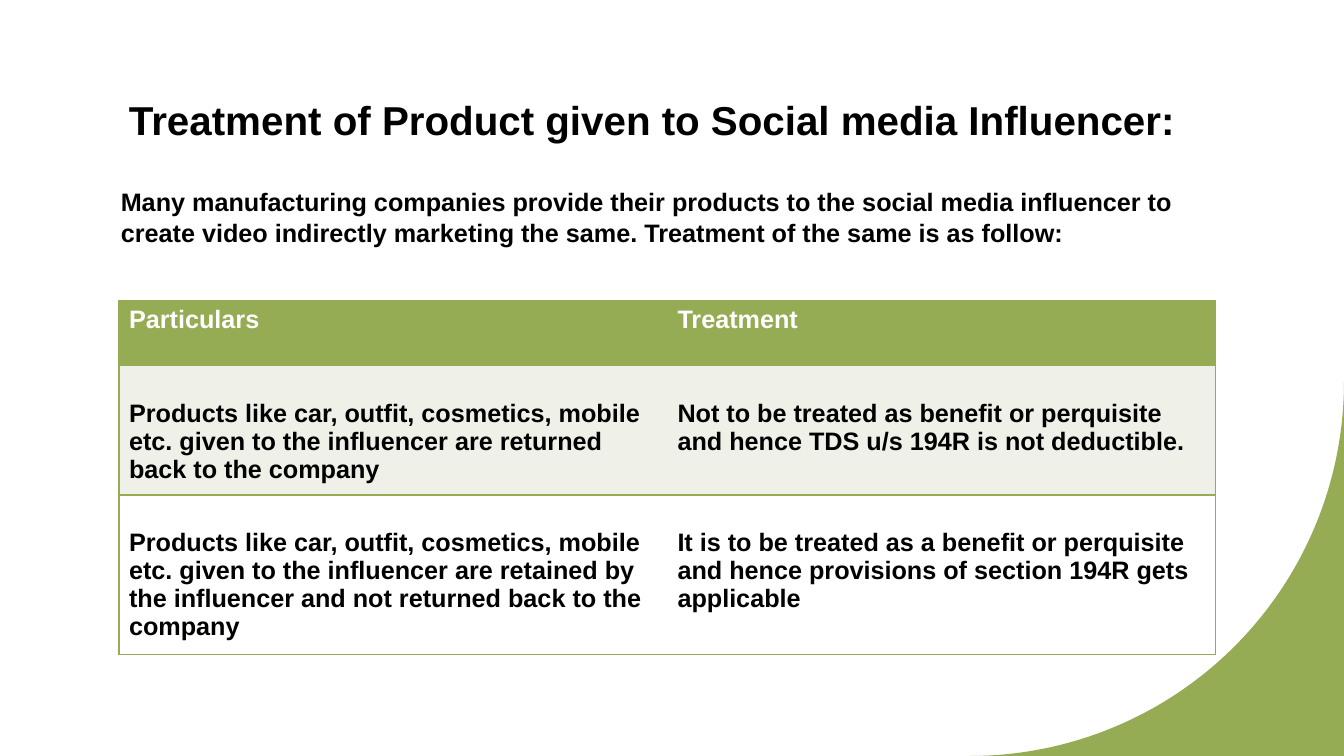
from math import cos, pi, sin

from lxml.etree import SubElement
from pptx import Presentation
from pptx.dml.color import RGBColor
from pptx.enum.text import MSO_ANCHOR as Anchor
from pptx.oxml.ns import qn
from pptx.util import Inches, Pt

TITLE = "Treatment of Product given to Social media Influencer:"
INTRO = ("Many manufacturing companies provide their products to the social media "
         "influencer to create video indirectly marketing the same. "
         "Treatment of the same is as follow:")
ROWS = [
    ("Particulars", "Treatment"),
    ("Products like car, outfit, cosmetics, mobile etc. given to the influencer "
     "are returned back to the company",
     "Not to be treated as benefit or perquisite and hence TDS u/s 194R is not deductible."),
    ("Products like car, outfit, cosmetics, mobile etc. given to the influencer "
     "are retained by the influencer and not returned back to the company",
     "It is to be treated as a benefit or perquisite and hence provisions of "
     "section 194R gets applicable"),
]
GREEN, BLACK, WHITE, PALE = "95AB54", "000000", "FFFFFF", "EFF1E9"
ROW_STYLES = [(GREEN, WHITE, 0.05), (PALE, BLACK, 0.33), (WHITE, BLACK, 0.33)]
ROW_HEIGHTS = (0.65, 1.22, 1.51)
WIDTH, HEIGHT = 13.33, 7.5
LEFT, TABLE_TOP, TABLE_WIDTH = 1.18, 2.98, 10.88
RADIUS, ARC_STEPS = 3.71, 90


def color(hex_string):
    return RGBColor.from_string(hex_string)


def write(tf, text, size=18, font_color=BLACK, spacing=1.0):
    tf.word_wrap = True
    p = tf.paragraphs[0]
    p.line_spacing = spacing
    r = p.add_run()
    r.text = text
    r.font.name, r.font.size, r.font.bold = "Arial", Pt(size), True
    r.font.color.rgb = color(font_color)


def add_text(slide, box, text, anchor=Anchor.TOP, **style):
    tf = slide.shapes.add_textbox(*map(Inches, box)).text_frame
    tf.vertical_anchor = anchor
    write(tf, text, **style)


def set_borders(cell, visible):
    """Draw the sides named in visible (letters of LRTB) and clear the others."""
    tc_pr = cell._tc.get_or_add_tcPr()
    for i, side in enumerate("LRTB"):
        ln = SubElement(tc_pr, qn(f"a:ln{side}"), w=str(Pt(1)))
        if side in visible:
            fill = SubElement(ln, qn("a:solidFill"))
            SubElement(fill, qn("a:srgbClr"), val=GREEN)
        else:
            SubElement(ln, qn("a:noFill"))
        tc_pr.insert(i, ln)


def add_corner(slide):
    """Fill the bottom right corner outside a quarter circle."""
    cx, cy = WIDTH - RADIUS, HEIGHT - RADIUS
    angles = [pi / 2 * i / ARC_STEPS for i in range(ARC_STEPS + 1)]
    arc = [(Inches(cx + RADIUS * cos(a)), Inches(cy + RADIUS * sin(a))) for a in angles]
    builder = slide.shapes.build_freeform(Inches(WIDTH), Inches(HEIGHT))
    builder.add_line_segments(arc, close=True)
    sp = builder.convert_to_shape()
    sp.shadow.inherit = False
    sp.fill.solid()
    sp.fill.fore_color.rgb = color(GREEN)
    sp.line.fill.background()


def add_treatment_table(slide):
    box = (LEFT, TABLE_TOP, TABLE_WIDTH, sum(ROW_HEIGHTS))
    table = slide.shapes.add_table(len(ROWS), 2, *map(Inches, box)).table
    for r, (texts, (fill, ink, top)) in enumerate(zip(ROWS, ROW_STYLES)):
        table.rows[r].height = Inches(ROW_HEIGHTS[r])
        for c, text in enumerate(texts):
            cell = table.cell(r, c)
            cell.margin_top = Inches(top)
            cell.fill.solid()
            cell.fill.fore_color.rgb = color(fill)
            set_borders(cell, "TB" + "LR"[c])
            write(cell.text_frame, text, font_color=ink)


def main():
    prs = Presentation()
    prs.slide_width, prs.slide_height = Inches(WIDTH), Inches(HEIGHT)
    slide = prs.slides.add_slide(prs.slide_layouts[6])
    add_corner(slide)
    add_text(slide, (LEFT, 0.43, TABLE_WIDTH, 1.04), TITLE,
             anchor=Anchor.BOTTOM, size=28.8, spacing=1.1)
    add_treatment_table(slide)
    add_text(slide, (1.1, 1.78, 10.96, 0.71), INTRO, spacing=1.05)
    prs.save("out.pptx")


if __name__ == "__main__":
    main()
